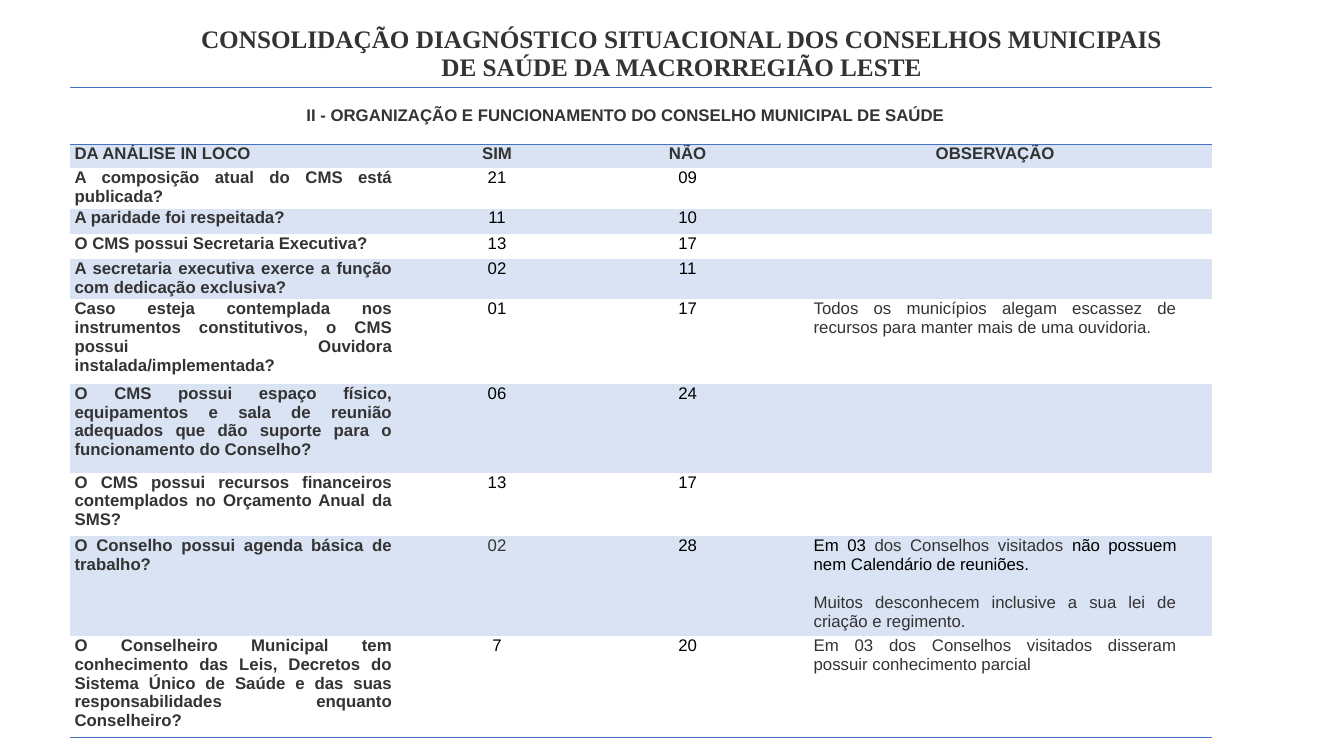
from lxml.etree import SubElement
from pptx import Presentation
from pptx.dml.color import RGBColor
from pptx.enum.text import MSO_ANCHOR as Anchor, PP_ALIGN as Align
from pptx.oxml import parse_xml
from pptx.oxml.ns import nsdecls, qn
from pptx.util import Inches, Pt

GRAY, BLACK, BLUE, BAND = "333333", "000000", "4472C4", "DAE3F3"
PLAIN_STYLE = "{2D5ABB26-0587-4C30-8999-92F81FD0307C}"

TITLE = ("CONSOLIDAÇÃO DIAGNÓSTICO SITUACIONAL DOS CONSELHOS MUNICIPAIS "
         "DE SAÚDE DA MACRORREGIÃO LESTE")
SECTION = "II - ORGANIZAÇÃO E FUNCIONAMENTO DO CONSELHO MUNICIPAL DE SAÚDE"
HEADERS = ["DA ANÁLISE IN LOCO", "SIM", "NÃO", "OBSERVAÇÃO"]

# Each note is a list of paragraphs, each paragraph a list of (text, colour) runs.
OMBUDSMAN = [[("Todos os municípios alegam escassez de recursos para manter "
               "mais de uma ouvidoria.", GRAY)]]
AGENDA = [[("Em 03 ", BLACK), ("dos Conselhos visitados ", GRAY),
           ("não possuem nem Calendário de reuniões.", BLACK)],
          [("Muitos desconhecem inclusive a sua lei de criação e regimento.", GRAY)]]
LAWS = [[("Em 03 dos Conselhos visitados disseram possuir conhecimento parcial", GRAY)]]

# Question, yes, no, note, row height in grid units, colour of the yes count
ANSWERS = [
    ("A composição atual do CMS está publicada?", "21", "09", [], 3.8, BLACK),
    ("A paridade foi respeitada?", "11", "10", [], 2.5, BLACK),
    ("O CMS possui Secretaria Executiva?", "13", "17", [], 2.5, BLACK),
    ("A secretaria executiva exerce a função com dedicação exclusiva?",
     "02", "11", [], 3.8, BLACK),
    ("Caso esteja contemplada nos instrumentos constitutivos, o CMS possui "
     "Ouvidora instalada/implementada?", "01", "17", OMBUDSMAN, 8.4, BLACK),
    ("O CMS possui espaço físico, equipamentos e sala de reunião adequados que "
     "dão suporte para o funcionamento do Conselho?", "06", "24", [], 8.8, BLACK),
    ("O CMS possui recursos financeiros contemplados no Orçamento Anual da SMS?",
     "13", "17", [], 6.3, BLACK),
    ("O Conselho possui agenda básica de trabalho?", "02", "28", AGENDA, 9.6, GRAY),
    ("O Conselheiro Municipal tem conhecimento das Leis, Decretos do Sistema Único "
     "de Saúde e das suas responsabilidades enquanto Conselheiro?",
     "7", "20", LAWS, 9.6, BLACK),
]


def rgb(color):
    return RGBColor.from_string(color)


class Deck:
    """Style and current slide; lengths are in grid units of a tenth of an inch."""

    def __init__(self):
        self.prs = Presentation()
        self.prs.slide_width, self.prs.slide_height = Inches(13.33), Inches(7.5)
        self.s = self.prs.slides.add_slide(self.prs.slide_layouts[6])

    def grid(self, *units):
        return [Inches(u / 10) for u in units]

    def add_text(self, tf, paragraphs, align, size=12, bold=False, name="Arial"):
        for i, runs in enumerate(paragraphs):
            p = tf.add_paragraph() if i else tf.paragraphs[0]
            p.alignment = align
            p.font.size, p.font.bold, p.font.name = Pt(size), bold, name
            for text, color in runs:
                r = p.add_run()
                r.text = text
                r.font.color.rgb = rgb(color)
            if i < len(paragraphs) - 1:
                p.space_after = Pt(13.8)

    def title(self, text, *box):
        tf = self.s.shapes.add_textbox(*self.grid(*box)).text_frame
        tf.word_wrap, tf.vertical_anchor = True, Anchor.MIDDLE
        self.add_text(tf, [[(text, GRAY)]], Align.CENTER, 18, True, "Times New Roman")
        tf.paragraphs[0].line_spacing = 0.9

    def table(self, left, top, columns, rows):
        box = self.grid(left, top, sum(columns), sum(rows))
        table = self.s.shapes.add_table(len(rows), len(columns), *box).table
        table.first_row = table.horz_banding = False
        table._tbl.tblPr.find(qn("a:tableStyleId")).text = PLAIN_STYLE
        for column, width in zip(table.columns, self.grid(*columns)):
            column.width = width
        for row, height in zip(table.rows, self.grid(*rows)):
            row.height = height
        return table

    def cell(self, cell, paragraphs, align, bold=False, fill=None):
        cell.margin_left, cell.margin_right = self.grid(0.5, 3.5)
        cell.margin_top = cell.margin_bottom = 0
        if fill:
            cell.fill.solid()
            cell.fill.fore_color.rgb = rgb(fill)
        else:
            cell.fill.background()
        self.add_text(cell.text_frame, paragraphs, align, bold=bold)
        if not paragraphs:
            # An empty cell needs a small end mark to keep its row low.
            SubElement(cell.text_frame.paragraphs[0]._p, qn("a:endParaRPr"), sz="1200")

    def rule(self, row, side):
        """Draw a line along the top (T) or bottom (B) of a table row."""
        for cell in row.cells:
            cell._tc.get_or_add_tcPr().insert(0, parse_xml(
                f'<a:ln{side} {nsdecls("a")} w="12700"><a:solidFill>'
                f'<a:srgbClr val="{BLUE}"/></a:solidFill></a:ln{side}>'))


def main():
    deck = Deck()
    deck.title(TITLE, 17.4, 1.55, 100.4, 7.7)

    heights = [5.6, 2.4] + [answer[4] for answer in ANSWERS]
    table = deck.table(6.9, 8.7, [35.5, 16.8, 21, 40], heights)

    section = table.cell(0, 0)
    section.merge(table.cell(0, 3))
    section.vertical_anchor = Anchor.MIDDLE
    deck.cell(section, [[(SECTION, GRAY)]], Align.CENTER, bold=True)

    for col, header in enumerate(HEADERS):
        align = Align.CENTER if col else Align.JUSTIFY
        deck.cell(table.cell(1, col), [[(header, GRAY)]], align, True, BAND)

    aligns = [Align.JUSTIFY, Align.CENTER, Align.CENTER, Align.JUSTIFY]
    for row, (question, yes, no, note, _, yes_color) in enumerate(ANSWERS, 2):
        texts = [[[(question, GRAY)]], [[(yes, yes_color)]], [[(no, BLACK)]], note]
        for col, (text, align) in enumerate(zip(texts, aligns)):
            deck.cell(table.cell(row, col), text, align, col == 0,
                      BAND if row % 2 else None)

    last = len(heights) - 1
    for row, side in [(0, "B"), (0, "T"), (last, "B")]:
        deck.rule(table.rows[row], side)
    deck.prs.save("out.pptx")


if __name__ == "__main__":
    main()
